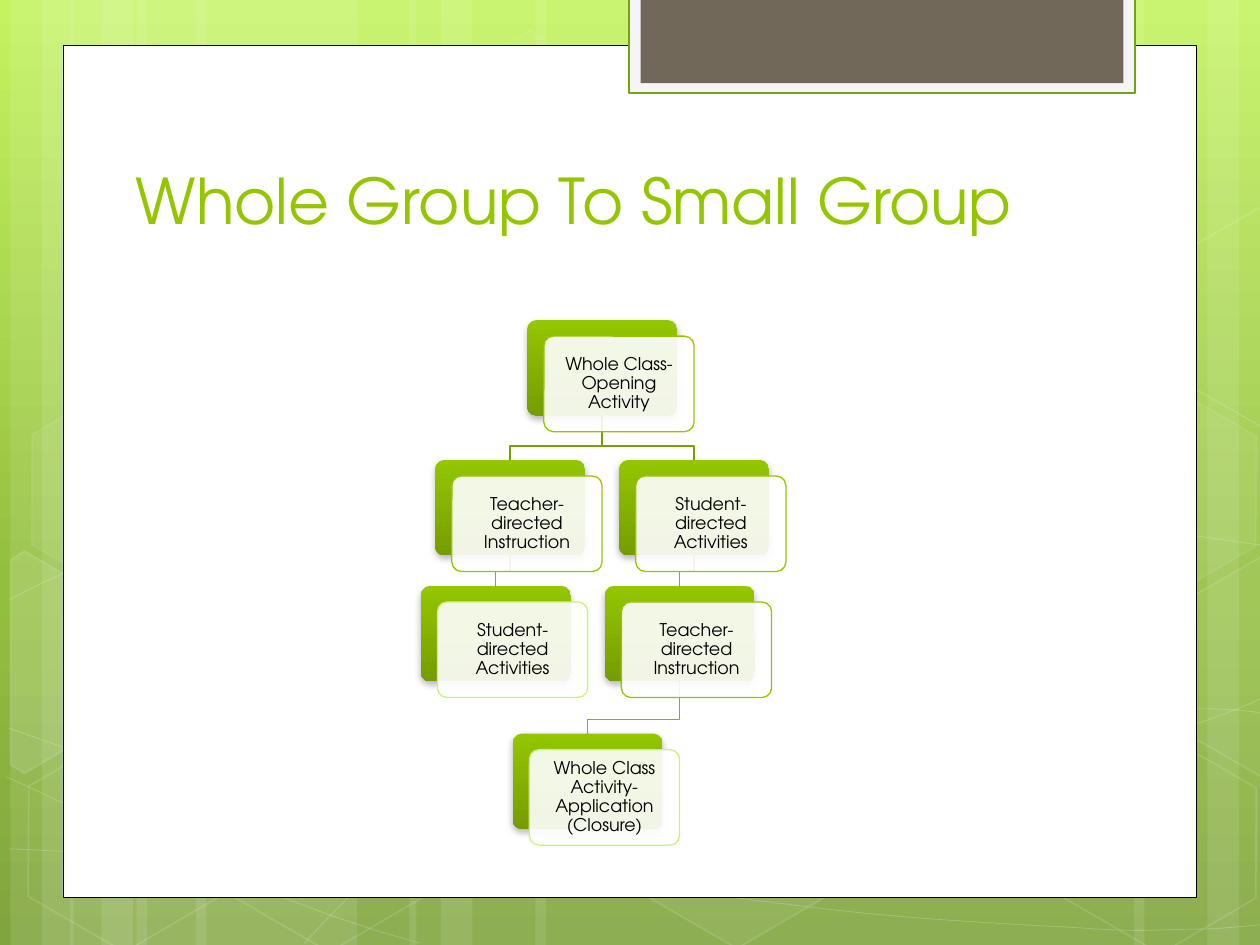
import lxml.etree
import pptx
import pptx.dml.color
import pptx.enum.shapes
import pptx.enum.text
import pptx.oxml.ns
import pptx.util

Pt = pptx.util.Pt
RGBColor = pptx.dml.color.RGBColor
MSO_SHAPE = pptx.enum.shapes.MSO_SHAPE
MSO_ANCHOR = pptx.enum.text.MSO_ANCHOR
qn = pptx.oxml.ns.qn

FONT = "TeX Gyre Adventor"
WHITE = RGBColor(0xFF, 0xFF, 0xFF)
BLACK = RGBColor(0x00, 0x00, 0x00)
GREEN = RGBColor(0x94, 0xC6, 0x00)
DEEP_GREEN = RGBColor(0x76, 0x9D, 0x00)
PALE_GREEN = RGBColor(0xCA, 0xF2, 0x78)
LINK_TOP = RGBColor(0x77, 0x9F, 0x00)
LINK_LOWER = RGBColor(0x86, 0xB4, 0x00)
TAB_FILL = RGBColor(0xF5, 0xF5, 0xF5)
TAB_LINE = RGBColor(0x74, 0xA5, 0x10)
TAB_INNER = RGBColor(0x71, 0x68, 0x5A)
SKY = [(0, RGBColor(0xC3, 0xF3, 0x5F)), (62, RGBColor(0x93, 0xBF, 0x3F)),
       (100, RGBColor(0x81, 0xA5, 0x3E))]
CARD_SHADE = [(0, GREEN), (100, DEEP_GREEN)]

STRIPES = [(78, 126), (6, 36), (24, 60), (112, 126), (40, 36), (58, 60),
           (528, 126), (690, 36), (648, 60), (306, 222), (234, 36), (252, 60)]
CURVES = [
    [(5, 485), (44, 487), (83, 489), (137, 488), (191, 487), (258, 486), (330, 479),
     (402, 472), (504, 458), (570, 444), (636, 431), (703, 409), (725, 397)],
    [(5, 343), (26, 332), (47, 321), (87, 310), (128, 300), (186, 284), (250, 279),
     (314, 274), (392, 273), (471, 279), (550, 284), (682, 307), (725, 312)],
    [(4, 444), (89, 484), (178, 523), (240, 539)],
    [(5, 416), (27, 424), (50, 432), (92, 444), (134, 454), (197, 472), (257, 485),
     (317, 497), (392, 510), (452, 517), (512, 525), (576, 528), (614, 530),
     (652, 533), (662, 531), (680, 531), (699, 531), (712, 529), (725, 528)],
    [(174, 539), (187, 525), (200, 510), (217, 498), (235, 485), (259, 470), (279, 460),
     (300, 450), (312, 446), (338, 438), (364, 431), (413, 421), (438, 416),
     (464, 411), (467, 411), (490, 410), (512, 408), (547, 405), (572, 405),
     (597, 404), (638, 405), (638, 405), (654, 405), (670, 405), (686, 405),
     (699, 405), (711, 406), (718, 407), (722, 408), (722, 407), (724, 408)],
]
HEXAGONS = [(240, 26, 4, 8), (358, 424, 6, 12), (8, 426, None, 12), (10, 225, 7, 8),
            (125, 426, None, 12), (542, 326, 10, 12), (600, 427, None, 12), (600, 226, 7, 8)]
LEFT_HEXAGON = [(6, 320), (14, 315), (69, 347), (68, 410), (14, 442), (6, 437)]
RIGHT_HEXAGON = [(667, 349), (721, 318), (726, 321), (726, 441), (721, 444), (667, 413)]

CARD_W, CARD_H = 85.8, 54.6
CARD_DX, CARD_DY = 9.6, 9.2
CARDS = {
    "opening": (301.2, 182.9, GREEN, "Whole Class-Opening Activity"),
    "teacher first": (248.6, 262.8, GREEN, "Teacher-directed Instruction"),
    "student second": (240.4, 334.8, PALE_GREEN, "Student-directed Activities"),
    "student first": (353.7, 262.8, GREEN, "Student-directed Activities"),
    "teacher second": (345.5, 334.8, GREEN, "Teacher-directed Instruction"),
    "closure": (292.9, 419.2, PALE_GREEN, "Whole Class Activity-Application (Closure)"),
}
LINKS = [("teacher second", "closure", LINK_LOWER),
         ("student first", "teacher second", LINK_LOWER),
         ("opening", "student first", LINK_TOP),
         ("teacher first", "student second", LINK_LOWER),
         ("opening", "teacher first", LINK_TOP)]


def set_alpha(solid, percent):
    """Make a solidFill element partly transparent."""
    lxml.etree.SubElement(solid[0], qn("a:alpha"), val=str(percent * 1000))


def set_gradient(props, stops):
    """Replace the solid fill in props with a top-down gradient."""
    grad = lxml.etree.Element(qn("a:gradFill"), rotWithShape="1")
    gs_lst = lxml.etree.SubElement(grad, qn("a:gsLst"))
    for pos, color in stops:
        gs = lxml.etree.SubElement(gs_lst, qn("a:gs"), pos=str(pos * 1000))
        lxml.etree.SubElement(gs, qn("a:srgbClr"), val=str(color))
    lxml.etree.SubElement(grad, qn("a:lin"), ang="5400000", scaled="0")
    props.replace(props.find(qn("a:solidFill")), grad)


def paint(sp, fill=None, alpha=100, line=None, width=1, line_alpha=100):
    """Give a shape its fill and line and drop the theme shadow."""
    sp.shadow.inherit = False
    props = sp.element.spPr
    if fill is None:
        sp.fill.background()
    else:
        sp.fill.solid()
        sp.fill.fore_color.rgb = fill
        if alpha < 100:
            set_alpha(props.find(qn("a:solidFill")), alpha)
    if line is None:
        sp.line.fill.background()
    else:
        sp.line.color.rgb = line
        sp.line.width = Pt(width)
        if line_alpha < 100:
            set_alpha(props.find(qn("a:ln")).find(qn("a:solidFill")), line_alpha)


def add_box(slide, kind, x, y, w, h, **look):
    """Add a painted preset shape."""
    sp = slide.shapes.add_shape(kind, Pt(x), Pt(y), Pt(w), Pt(h))
    paint(sp, **look)
    return sp


def add_outline(slide, points, close=False, **look):
    """Add a painted freeform through the points."""
    pts = [(Pt(x), Pt(y)) for x, y in points]
    builder = slide.shapes.build_freeform(*pts[0])
    builder.add_line_segments(pts[1:], close=close)
    paint(builder.convert_to_shape(), **look)


def curve_points(knots, steps=8):
    """Sample a chain of cubic Bezier curves."""
    points = [knots[0]]
    for i in range(0, len(knots) - 1, 3):
        for step in range(1, steps + 1):
            t = step / steps
            weights = ((1 - t) ** 3, 3 * t * (1 - t) ** 2, 3 * t * t * (1 - t), t ** 3)
            points.append(tuple(sum(w * k[axis] for w, k in zip(weights, knots[i:i + 4]))
                                for axis in (0, 1)))
    return points


def set_text(sp, text, size, color, anchor):
    """Fill a text frame with one formatted paragraph."""
    tf = sp.text_frame
    tf.word_wrap = True
    tf.vertical_anchor = anchor
    tf.text = text
    r = tf.paragraphs[0].runs[0]
    r.font.size = Pt(size)
    r.font.name = FONT
    r.font.color.rgb = color
    return tf


def add_backdrop(slide):
    """Draw the gradient, stripes, curves and hexagons."""
    slide.background.fill.solid()
    set_gradient(next(slide.element.iter(qn("p:bgPr"))), SKY)
    for x, w in STRIPES:
        add_box(slide, MSO_SHAPE.RECTANGLE, x, 0, w, 540, fill=WHITE, alpha=10)
    for knots in CURVES:
        add_outline(slide, curve_points(knots), line=WHITE, width=0.5, line_alpha=20)
    for x, y, alpha, line_alpha in HEXAGONS:
        sp = add_box(slide, MSO_SHAPE.HEXAGON, x, y, 126, 109.5, line=WHITE,
                     line_alpha=line_alpha, fill=WHITE if alpha else None, alpha=alpha)
        sp.adjustments[0] = 0.285
        sp.rotation = 30
    upper_right = [(x, y - 200) for x, y in RIGHT_HEXAGON]
    for points, fill, alpha in [(LEFT_HEXAGON, WHITE, 10), (RIGHT_HEXAGON, WHITE, 4),
                                (upper_right, None, 100)]:
        add_outline(slide, points, True, fill=fill, alpha=alpha, line=WHITE, line_alpha=12)


def add_panel(slide):
    """Draw the white page and the tab at its top."""
    rect = MSO_SHAPE.RECTANGLE
    add_box(slide, rect, 36, 26, 648, 487, fill=WHITE, line=BLACK, width=0.5)
    add_box(slide, rect, 359.3, -1.5, 289.5, 54.7, fill=TAB_FILL, line=TAB_LINE, width=1.25)
    add_box(slide, rect, 366, -1.5, 276, 49, fill=TAB_INNER)


def add_link(slide, parent, child, color):
    """Draw the elbow line from one card down to the next."""
    x1, y1 = CARDS[parent][0] + CARD_W / 2, CARDS[parent][1] + CARD_H
    x2, y2 = CARDS[child][0] + CARD_W / 2, CARDS[child][1]
    turn = y2 - 8
    add_outline(slide, [(x1, y1), (x1, turn), (x2, turn), (x2, y2)], line=color, width=0.75)


def add_card(slide, x, y, line, text):
    """Draw a green card with the labelled card over it."""
    kind = MSO_SHAPE.ROUNDED_RECTANGLE
    back = add_box(slide, kind, x, y, CARD_W, CARD_H, fill=GREEN)
    set_gradient(back.element.spPr, CARD_SHADE)
    shadow = lxml.etree.SubElement(back.element.spPr.find(qn("a:effectLst")), qn("a:outerShdw"),
                                   blurRad=str(Pt(4)), dist=str(Pt(2)), dir="5400000")
    color = lxml.etree.SubElement(shadow, qn("a:srgbClr"), val=str(BLACK))
    lxml.etree.SubElement(color, qn("a:alpha"), val="28000")
    front = add_box(slide, kind, x + CARD_DX, y + CARD_DY, CARD_W, CARD_H,
                    fill=WHITE, alpha=90, line=line, width=0.75)
    back.adjustments[0] = front.adjustments[0] = 0.1
    tf = set_text(front, text, 10, BLACK, MSO_ANCHOR.MIDDLE)
    tf.margin_left = tf.margin_right = tf.margin_top = tf.margin_bottom = Pt(3)
    tf.paragraphs[0].alignment = pptx.enum.text.PP_ALIGN.CENTER
    tf.paragraphs[0].line_spacing = 0.9


def main():
    """Build the slide and save it."""
    prs = pptx.Presentation()
    prs.slide_width, prs.slide_height = Pt(720), Pt(540)
    slide = prs.slides.add_slide(prs.slide_layouts[6])
    add_backdrop(slide)
    add_panel(slide)
    title = slide.shapes.add_textbox(Pt(70.5), Pt(49), Pt(553), Pt(90))
    set_text(title, "Whole Group To Small Group", 36, GREEN, MSO_ANCHOR.BOTTOM)
    for parent, child, color in LINKS:
        add_link(slide, parent, child, color)
    for card in CARDS.values():
        add_card(slide, *card)
    prs.save("out.pptx")


if __name__ == "__main__":
    main()
